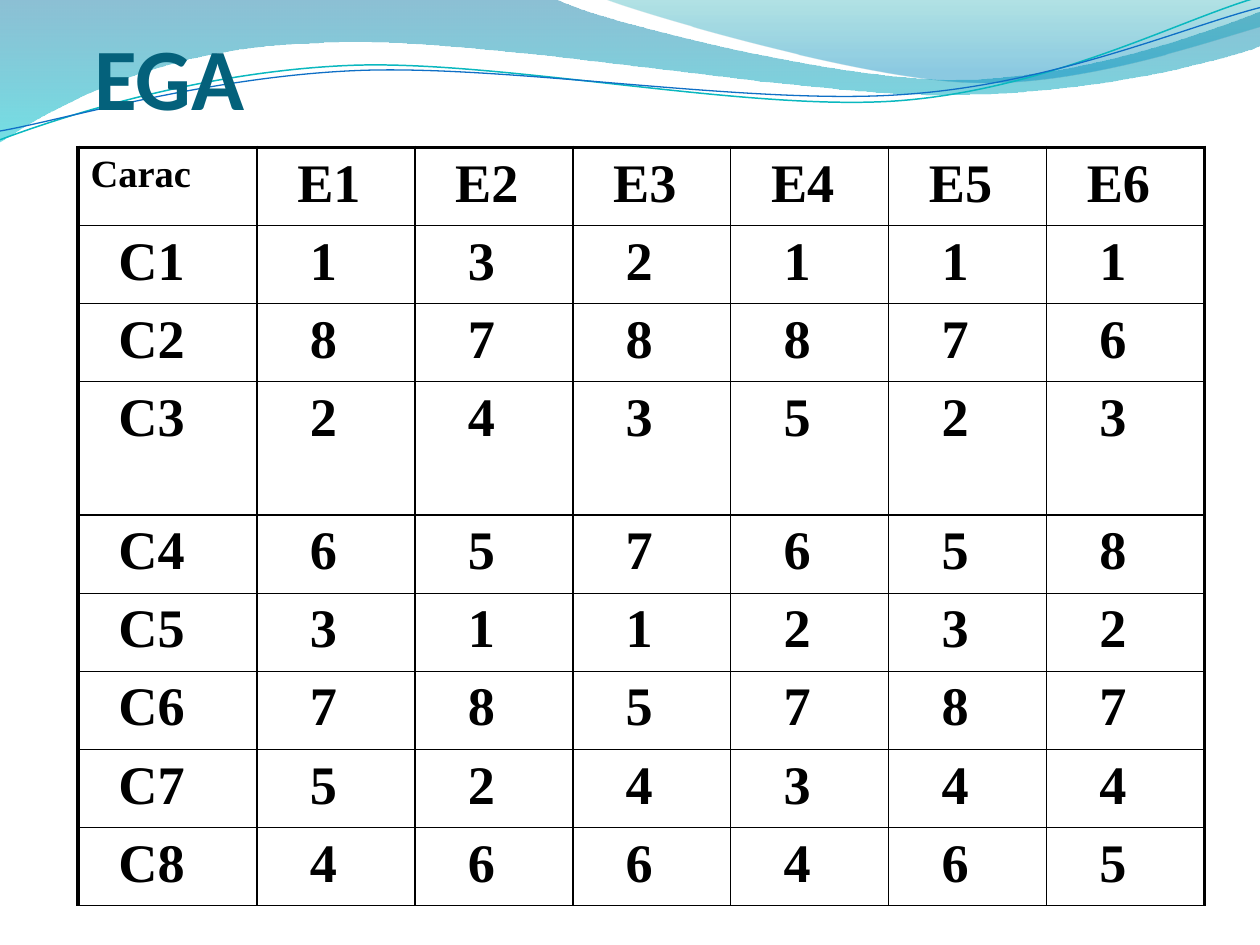
import math

from lxml import etree
from pptx import Presentation
from pptx import util as u
from pptx.dml.color import RGBColor
from pptx.enum import text
from pptx.oxml import ns, parse_xml

COLORS = {"title": "04617B", "ink": "000000", "teal_line": "0AB8BF", "blue_line": "0F6FC6"}
BODY_FONT = "Times New Roman"
TITLE = "EGA"
HEADER = ["Carac", "E1", "E2", "E3", "E4", "E5", "E6"]
SCORES = {
    "C1": [1, 3, 2, 1, 1, 1],
    "C2": [8, 7, 8, 8, 7, 6],
    "C3": [2, 4, 3, 5, 2, 3],
    "C4": [6, 5, 7, 6, 5, 8],
    "C5": [3, 1, 1, 2, 3, 2],
    "C6": [7, 8, 5, 7, 8, 7],
    "C7": [5, 2, 4, 3, 4, 4],
    "C8": [4, 6, 6, 4, 6, 5],
}
ROWS = [HEADER] + [[name] + scores for name, scores in SCORES.items()]
TABLE_LEFT, TABLE_TOP, TABLE_WIDTH = 0.62, 1.17, 8.94
LABEL_WIDTH = 1.42
ROW_HEIGHT, TALL_HEIGHT, TALL_ROW = 0.62, 1.06, 3
LABEL_INDENT, SCORE_INDENT = 0.22, 0.32
OUTER, INNER = 2.25, 1

WAVES = [
    {"frame": (-0.01, -0.01, 10.02, 1.14), "start": (0, 0),
     "segments": [(4.4, -0.01), (4.76, 0.17, 6.64, 0.63, 7.58, 0.63),
                  (8.53, 0.63, 9.58, 0.26, 10, 0.09), (10.01, 0.36),
                  (9.83, 0.44, 8.7, 0.76, 7.46, 0.75), (6.22, 0.75, 3.82, 0.28, 2.57, 0.34),
                  (1.29, 0.36, 0.46, 0.83, -0.01, 1.13), (0, 0)],
     "gradient": [(0, "0074A1", 45), (100, "00C6CF", 55)]},
    {"frame": (4.79, -0.01, 5.21, 0.7), "start": (4.79, -0.01),
     "segments": [(5.09, 0.11, 6.82, 0.62, 7.69, 0.65), (8.56, 0.69, 9.61, 0.32, 10, 0.21),
                  (10, 0), (4.79, -0.01)],
     "gradient": [(0, "00A1A9", 30), (80, "008BBF", 45)]},
    {"frame": (-0.02, 0.22, 10.02, 0.71), "rotation": 357.3, "start": (0, 1.11),
     "segments": [(0.48, 0.93, 1.58, 0.57, 2.77, 0.52), (3.95, 0.47, 5.93, 0.89, 7.13, 0.8),
                  (8.33, 0.71, 9.38, 0.15, 9.98, -0.02)],
     "line": ("teal_line", 0.85)},
    {"frame": (-0.02, 0.3, 10.03, 0.58), "rotation": 357.3, "start": (0, 1.04),
     "segments": [(0.47, 0.96, 1.64, 0.61, 2.83, 0.56), (4.03, 0.51, 5.97, 0.84, 7.17, 0.75),
                  (8.36, 0.67, 9.41, 0.21, 10, 0.06)],
     "line": ("blue_line", 0.75)},
]


def rgb(name):
    return RGBColor.from_string(COLORS[name])


def to_frame(point, frame, rotation):
    left, top, width, height = frame
    angle = math.radians(-rotation)
    dx, dy = point[0] - left - width / 2, point[1] - top - height / 2
    return (u.Inches(width / 2 + dx * math.cos(angle) - dy * math.sin(angle)),
            u.Inches(height / 2 + dx * math.sin(angle) + dy * math.cos(angle)))


def draw_curves(shape, wave):
    frame, rotation = wave["frame"], wave.get("rotation", 0)
    shape.left, shape.top, shape.width, shape.height = map(u.Inches, frame)
    shape.rotation = rotation
    outline = shape.element.spPr.find(".//" + ns.qn("a:path"))
    outline.set("w", str(shape.width))
    outline.set("h", str(shape.height))
    for command in list(outline):
        outline.remove(command)
    for index, segment in enumerate([wave["start"]] + wave["segments"]):
        kind = "moveTo" if index == 0 else "lnTo" if len(segment) == 2 else "cubicBezTo"
        command = etree.SubElement(outline, ns.qn(f"a:{kind}"))
        for point in zip(segment[::2], segment[1::2]):
            x, y = to_frame(point, frame, rotation)
            etree.SubElement(command, ns.qn("a:pt"), x=str(x), y=str(y))
    if "gradient" in wave:
        etree.SubElement(outline, ns.qn("a:close"))


def fill_gradient(shape, stops):
    shape.fill.background()
    marks = "".join(
        f'<a:gs pos="{position * 1000}"><a:srgbClr val="{color}">'
        f'<a:alpha val="{alpha * 1000}"/></a:srgbClr></a:gs>'
        for position, color, alpha in stops)
    gradient = parse_xml(f'<a:gradFill {ns.nsdecls("a")} rotWithShape="1"><a:gsLst>{marks}</a:gsLst>'
                         '<a:lin ang="5400000" scaled="0"/></a:gradFill>')
    properties = shape.element.spPr
    properties.replace(properties.find(ns.qn("a:noFill")), gradient)


def add_wave(slide, wave):
    points = [tuple(map(u.Inches, segment[-2:])) for segment in [wave["start"]] + wave["segments"]]
    builder = slide.shapes.build_freeform(*points[0])
    builder.add_line_segments(points[1:], close=False)
    shape = builder.convert_to_shape()
    draw_curves(shape, wave)
    shape.shadow.inherit = False
    if "gradient" in wave:
        fill_gradient(shape, wave["gradient"])
        shape.line.fill.background()
    else:
        color, width = wave["line"]
        shape.fill.background()
        shape.line.color.rgb = rgb(color)
        shape.line.width = u.Pt(width)


def set_borders(cell, widths):
    properties = cell._tc.get_or_add_tcPr()
    for side, width in widths.items():
        line = etree.SubElement(properties, ns.qn(f"a:ln{side}"), w=str(u.Pt(width)))
        fill = etree.SubElement(line, ns.qn("a:solidFill"))
        etree.SubElement(fill, ns.qn("a:srgbClr"), val=COLORS["ink"])


def fill_cell(cell, value, row, column):
    cell.text_frame.text = str(value)
    cell.vertical_anchor = text.MSO_ANCHOR.TOP
    paragraph = cell.text_frame.paragraphs[0]
    corner = row == 0 and column == 0
    if not corner:
        indent = LABEL_INDENT if row == 0 or column == 0 else SCORE_INDENT
        paragraph._p.get_or_add_pPr().set("marL", str(u.Inches(indent)))
    font = paragraph.runs[0].font
    font.name, font.size, font.bold = BODY_FONT, u.Pt(22 if corner else 31), True
    font.color.rgb = rgb("ink")
    set_borders(cell, {
        "L": OUTER if column == 0 else INNER,
        "R": OUTER if column == len(HEADER) - 1 else INNER,
        "T": OUTER if row == 0 else INNER,
        "B": INNER,
    })
    cell.fill.background()


def add_scores(slide):
    score_count = len(HEADER) - 1
    widths = [LABEL_WIDTH] + [(TABLE_WIDTH - LABEL_WIDTH) / score_count] * score_count
    heights = [TALL_HEIGHT if row == TALL_ROW else ROW_HEIGHT for row in range(len(ROWS))]
    table = slide.shapes.add_table(len(ROWS), len(HEADER), u.Inches(TABLE_LEFT), u.Inches(TABLE_TOP),
                                   u.Inches(TABLE_WIDTH), u.Inches(sum(heights))).table
    table.first_row = table.horz_banding = False
    for column, width in zip(table.columns, widths):
        column.width = u.Inches(width)
    for row, height in zip(table.rows, heights):
        row.height = u.Inches(height)
    for row, values in enumerate(ROWS):
        for column, value in enumerate(values):
            fill_cell(table.cell(row, column), value, row, column)


def place_title(slide):
    title = slide.shapes.title
    title.left, title.top, title.width, title.height = map(u.Inches, (0.75, 0, 8.5, 1.02))
    frame = title.text_frame
    frame.text = TITLE
    frame.vertical_anchor = text.MSO_ANCHOR.BOTTOM
    frame.margin_left = frame.margin_right = frame.margin_bottom = 0
    frame.margin_top = u.Inches(0.05)
    paragraph = frame.paragraphs[0]
    paragraph.alignment = text.PP_ALIGN.LEFT
    font = paragraph.runs[0].font
    font.name, font.size, font.bold = "Calibri", u.Pt(50), True
    font.color.rgb = rgb("title")
    slide.shapes._spTree.append(title.element)


def main():
    presentation = Presentation()
    presentation.slide_width, presentation.slide_height = u.Inches(10), u.Inches(7.5)
    slide = presentation.slides.add_slide(presentation.slide_layouts[5])
    for wave in WAVES:
        add_wave(slide, wave)
    place_title(slide)
    add_scores(slide)
    presentation.save("out.pptx")


if __name__ == "__main__":
    main()
